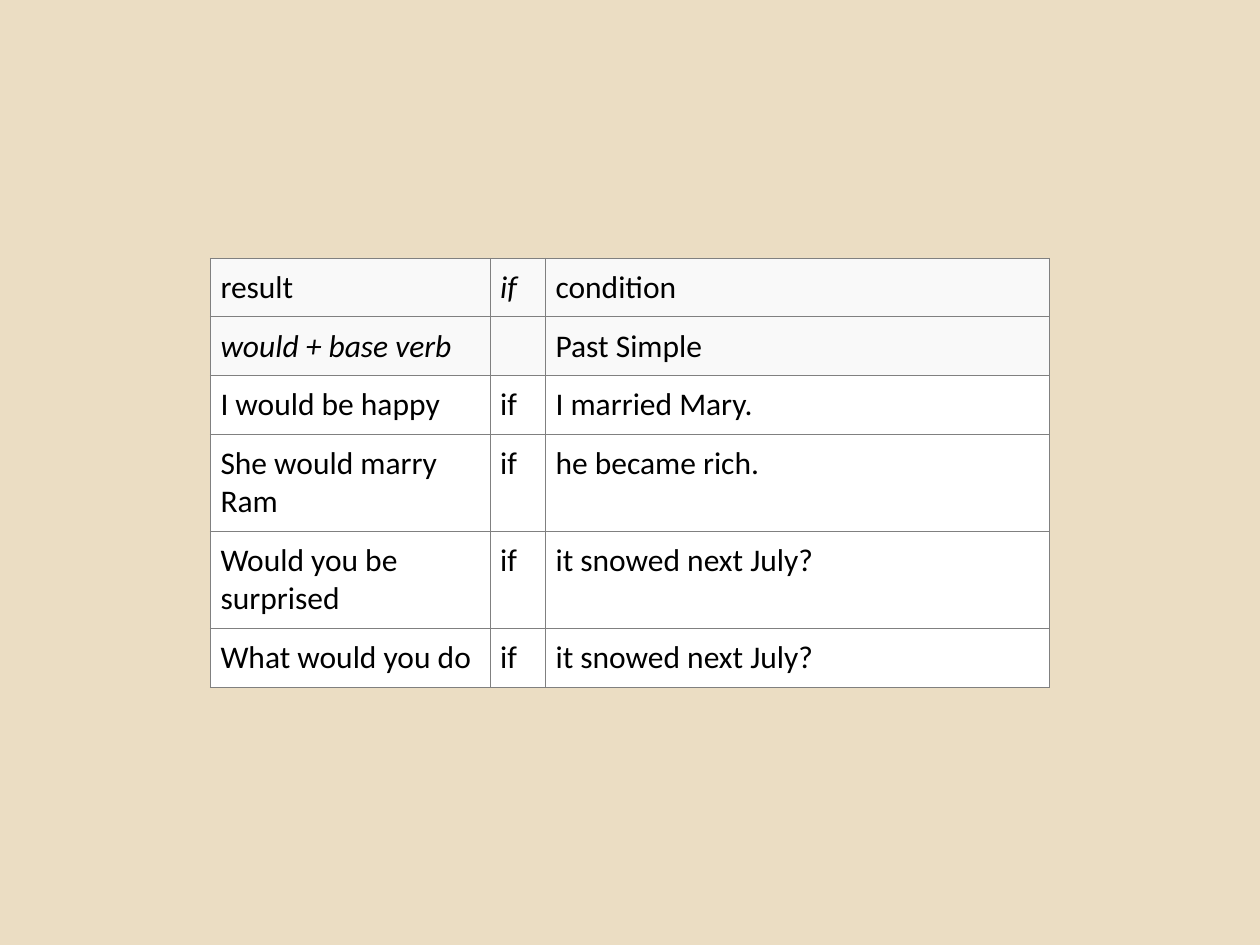
from pptx import Presentation
from pptx.dml.color import RGBColor
from pptx.oxml.ns import qn
from pptx.util import Inches, Pt
from lxml.etree import SubElement

SAND = RGBColor(0xEB, 0xDD, 0xC3)
PALE_GREY = RGBColor(0xF9, 0xF9, 0xF9)
WHITE = RGBColor(0xFF, 0xFF, 0xFF)
BLACK = RGBColor(0, 0, 0)
GREY = RGBColor(0x80, 0x80, 0x80)

HEADER_ROWS = 2
COLUMN_WIDTHS = (2.22, 0.44, 4)
ROW_HEIGHTS = (0.46, 0.46, 0.46, 0.76, 0.76, 0.46)
ITALIC_CELLS = {(0, 1), (1, 0)}
SENTENCES = (
    ("result", "if", "condition"),
    ("would + base verb", "", "Past Simple"),
    ("I would be happy", "if", "I married Mary."),
    ("She would marry Ram", "if", "he became rich."),
    ("Would you be surprised", "if", "it snowed next July?"),
    ("What would you do", "if", "it snowed next July?"),
)


def set_background(page):
    page.background.fill.solid()
    page.background.fill.fore_color.rgb = SAND


def add_borders(cell):
    properties = cell._tc.get_or_add_tcPr()
    for position, side in enumerate(("lnL", "lnR", "lnT", "lnB")):
        line = SubElement(properties, qn(f"a:{side}"), w=str(Pt(0.6)))
        fill = SubElement(line, qn("a:solidFill"))
        SubElement(fill, qn("a:srgbClr"), val=str(GREY))
        properties.insert(position, line)


def fill_cell(cell, text, color, italic):
    cell.margin_left = cell.margin_right = Inches(0.08)
    cell.margin_top = cell.margin_bottom = Inches(0.08)
    cell.fill.solid()
    cell.fill.fore_color.rgb = color
    add_borders(cell)
    cell.text = text
    font = cell.text_frame.paragraphs[0].font
    font.name = "Calibri"
    font.size = Pt(18)
    font.italic = italic
    font.color.rgb = BLACK


def add_conditional_table(page):
    frame = page.shapes.add_table(
        len(SENTENCES), len(COLUMN_WIDTHS), Inches(1.67), Inches(2.05),
        Inches(sum(COLUMN_WIDTHS)), Inches(sum(ROW_HEIGHTS)))
    table = frame.table
    table.first_row = False
    table.horz_banding = False
    for column, width in zip(table.columns, COLUMN_WIDTHS):
        column.width = Inches(width)
    for row, height in zip(table.rows, ROW_HEIGHTS):
        row.height = Inches(height)
    for row_index, sentence in enumerate(SENTENCES):
        color = PALE_GREY if row_index < HEADER_ROWS else WHITE
        for column_index, text in enumerate(sentence):
            italic = (row_index, column_index) in ITALIC_CELLS
            fill_cell(table.cell(row_index, column_index), text, color, italic)


def main():
    deck = Presentation()
    deck.slide_width = Inches(10)
    deck.slide_height = Inches(7.5)
    page = deck.slides.add_slide(deck.slide_layouts[6])
    set_background(page)
    add_conditional_table(page)
    deck.save("out.pptx")


if __name__ == "__main__":
    main()
